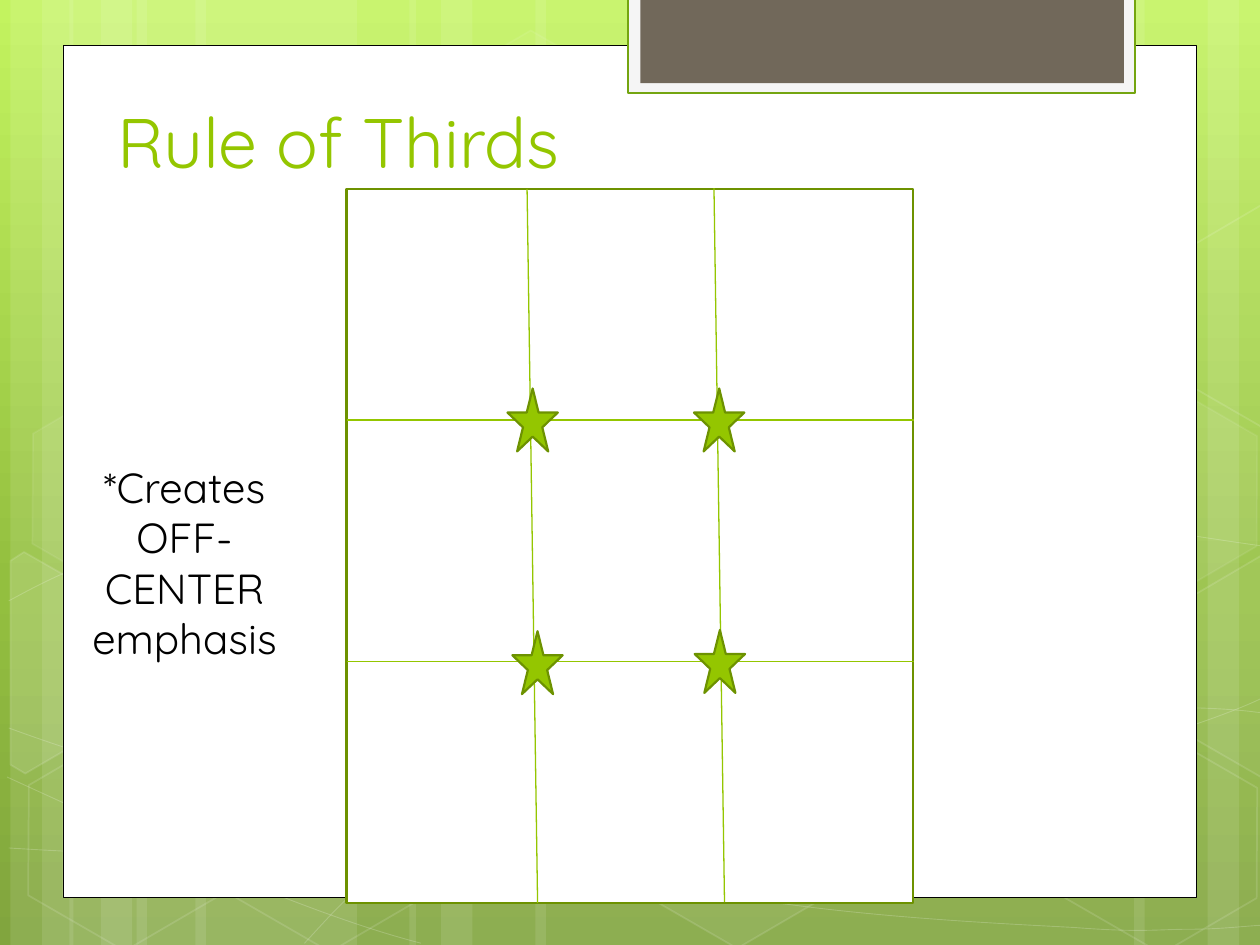
import math

import pptx
import pptx.dml.color
import pptx.enum.shapes
import pptx.enum.text
import pptx.oxml.ns
import pptx.util
from lxml import etree

Pt = pptx.util.Pt
RGB = pptx.dml.color.RGBColor
SHAPE = pptx.enum.shapes.MSO_SHAPE
FIT = pptx.enum.text.MSO_AUTO_SIZE
ALIGN = pptx.enum.text.PP_ALIGN
qn = pptx.oxml.ns.qn

WHITE = RGB(0xFF, 0xFF, 0xFF)
BLACK = RGB(0, 0, 0)
GREEN = RGB(0x94, 0xC6, 0x00)
DARK_GREEN = RGB(0x6D, 0x92, 0x00)
TAB_GREEN = RGB(0x74, 0xA5, 0x10)
PALE_GREY = RGB(0xF5, 0xF5, 0xF5)
BROWN = RGB(0x71, 0x68, 0x5A)
BACKDROP = [(0, "C3F35F"), (62, "93BF3F"), (100, "81A53E")]
FONT = "Quicksand"


def paint(shape, fill=None, line=None, width=1, fill_alpha=100, line_alpha=100):
    """Set fill and outline; alphas are opacities in percent."""
    shape.shadow.inherit = False
    for part, color, alpha in ((shape.fill, fill, fill_alpha),
                               (shape.line.fill, line, line_alpha)):
        if color is None:
            part.background()
            continue
        part.solid()
        part.fore_color.rgb = color
        if alpha < 100:
            solid = part._xPr.find(qn("a:solidFill"))
            etree.SubElement(solid[0], qn("a:alpha"), val=str(alpha * 1000))
    if line is not None:
        shape.line.width = Pt(width)


def outline(shapes, points, close):
    """Draw a freeform through points given in points."""
    points = [(Pt(x), Pt(y)) for x, y in points]
    builder = shapes.build_freeform(*points[0], scale=1.0)
    builder.add_line_segments(points[1:], close=close)
    return builder.convert_to_shape()


deck = pptx.Presentation()
deck.slide_width, deck.slide_height = Pt(720), Pt(540)
page = deck.slides.add_slide(deck.slide_layouts[5])
shapes = page.shapes

# Background gradient, top to bottom
backdrop = page.background.fill
backdrop.gradient()
backdrop.gradient_angle = 270
stops = page.background._cSld.find(".//" + qn("a:gsLst"))
for stop in list(stops):
    stops.remove(stop)
for position, color in BACKDROP:
    stop = etree.SubElement(stops, qn("a:gs"), pos=str(position * 1000))
    etree.SubElement(stop, qn("a:srgbClr"), val=color)

# Translucent vertical bars: left, width, rotation
left_bars = [(78, 126, 0), (6, 36, 0), (24, 60, 0)]
bars = left_bars + [(left + 33.6, width, turn) for left, width, turn in left_bars]
bars += [(528, 126, 180), (690, 36, 180), (648, 60, 180),
         (306, 222, 0), (234, 36, 0), (252, 60, 0)]
for left, width, turn in bars:
    bar = shapes.add_shape(SHAPE.RECTANGLE, Pt(left), 0, Pt(width), Pt(540))
    bar.rotation = turn
    paint(bar, WHITE, fill_alpha=10)

# Thin waves: a start point, then cubic Bezier triples
waves = [
    [(5, 484.6), (44, 487), (83, 489), (137, 488), (191, 487), (258, 486), (330, 479),
     (402, 472), (504, 458), (570, 444), (636, 431), (703, 409), (725, 397)],
    [(5, 343.4), (26, 332), (47, 321), (87, 310), (128, 299), (186, 284), (250, 279),
     (314, 273), (392, 273), (471, 279), (550, 284), (682, 307), (725, 312.5)],
    [(4, 444), (91, 484), (178, 523), (240.5, 539)],
    [(5, 416), (27, 424), (50, 432), (92, 443.5), (134, 454), (197, 472), (257, 484.6),
     (317, 497), (392, 510), (452, 517), (512, 525), (576, 528), (614, 530),
     (652, 533), (662, 531), (680, 531), (699, 531), (712, 529), (725, 528.5)],
    [(174, 539), (187, 525), (200, 510), (217, 497.5), (235, 485), (259, 470), (279, 460),
     (300, 450), (312, 446), (338, 438.5), (364, 431), (413, 421), (438, 416),
     (464, 411), (467, 411), (490, 410), (512, 408), (547, 405), (572, 404.6),
     (597, 404), (638, 404.6), (638, 404.6), (654, 404.6), (670, 404.6), (686, 404.6),
     (699, 405), (711, 406), (718, 407), (724, 407.5), (722, 407), (724, 407.5)],
]
for points in waves:
    wave = outline(shapes, points, False)
    segments = list(wave._element.iter(qn("a:lnTo")))
    for first in range(0, len(segments), 3):
        triple = segments[first:first + 3]
        curve = etree.SubElement(triple[0].getparent(), qn("a:cubicBezTo"))
        for segment in triple:
            curve.append(segment[0])
            segment.getparent().remove(segment)
    paint(wave, line=WHITE, width=0.5, line_alpha=20)

# Hexagons: left, top, fill opacity (0 for none), line opacity
hexagons = [(240.5, 26, 4, 8), (358, 424, 6, 12), (8, 425.5, 0, 12), (10.4, 224.6, 7, 8),
            (125.3, 426, 0, 12), (542, 326, 10, 12), (600.5, 427, 0, 12), (600.5, 226, 7, 8)]
for left, top, fill_alpha, line_alpha in hexagons:
    hexagon = shapes.add_shape(SHAPE.HEXAGON, Pt(left), Pt(top), Pt(126), Pt(109.4))
    hexagon.adjustments[0] = 0.285
    hexagon.rotation = 30
    paint(hexagon, WHITE if fill_alpha else None, WHITE, 1, fill_alpha, line_alpha)

# Hexagons cut off by the slide edges: corners, turning centre, fill opacity
left_cut = [(6, 320.4), (13.7, 315.4), (69, 347), (68.4, 410.4), (14.4, 442), (6, 437)]
right_cut = [(666.7, 349.2), (720.7, 317.5), (726.5, 321), (726.5, 441.4),
             (721.4, 444.2), (666.7, 412.6)]
upper_cut = [(x, y - 200.3) for x, y in right_cut]
cos, sin = math.cos(math.radians(30)), math.sin(math.radians(30))
for corners, (mid_x, mid_y), fill_alpha in ((left_cut, (25.9, 385.2), 10),
                                            (right_cut, (709.2, 374.4), 4),
                                            (upper_cut, (709.2, 174.1), 0)):
    upright = [(mid_x + (x - mid_x) * cos + (y - mid_y) * sin,
                mid_y - (x - mid_x) * sin + (y - mid_y) * cos) for x, y in corners]
    cut = outline(shapes, upright, True)
    cut.rotation = 30
    paint(cut, WHITE if fill_alpha else None, WHITE, 1, fill_alpha, 12)

# Content panel, top tab and the frame of the thirds
panels = [
    (36, 26, 648, 487, WHITE, BLACK, 0.5),
    (359, -1.5, 289.8, 54.7, PALE_GREY, TAB_GREEN, 1.25),
    (366, -1.5, 276.2, 49, BROWN, None, 0),
    (198, 108, 324, 408, WHITE, DARK_GREEN, 1.25),
]
for left, top, width, height, fill, line, weight in panels:
    if (left, top) == (198, 108):
        # Title goes in front of the panel and behind the frame
        title = shapes.title
        title._element.getparent().append(title._element)
    panel = shapes.add_shape(SHAPE.RECTANGLE, Pt(left), Pt(top), Pt(width), Pt(height))
    paint(panel, fill, line, weight)

# Lines of the thirds
thirds = [(301.2, 108, 307.2, 516), (408, 107.5, 414, 515.5),
          (198, 240, 522, 240), (198, 378, 522, 378)]
for ends in thirds:
    line = shapes.add_connector(pptx.enum.shapes.MSO_CONNECTOR.STRAIGHT,
                                *[Pt(end) for end in ends])
    line.line.color.rgb = GREEN
    line.line.width = Pt(0.75)
    etree.SubElement(line._element.spPr, qn("a:effectLst"))

# Stars at the crossings
for left, top in ((290, 222), (396.6, 222), (292.8, 360.7), (397, 360)):
    star = shapes.add_shape(SHAPE.STAR_5_POINT, Pt(left), Pt(top), Pt(28.8), Pt(36))
    paint(star, GREEN, DARK_GREEN, 1.25)

# Title and the note beside the frame
title.left, title.top, title.width, title.height = Pt(60), Pt(18), Pt(553), Pt(90)
title.text_frame.vertical_anchor = pptx.enum.text.MSO_ANCHOR.BOTTOM
note = shapes.add_textbox(Pt(31.3), Pt(260), Pt(148.3), Pt(94.3))
for box, words, size, color, align, fit in (
        (title, "Rule of Thirds", 40, GREEN, ALIGN.LEFT, FIT.NONE),
        (note, "*Creates OFF-CENTER emphasis", 24, BLACK, ALIGN.CENTER,
         FIT.SHAPE_TO_FIT_TEXT)):
    box.text_frame.word_wrap = True
    box.text_frame.auto_size = fit
    para = box.text_frame.paragraphs[0]
    para.alignment = align
    span = para.add_run()
    span.text = words
    span.font.name = FONT
    span.font.size = Pt(size)
    span.font.color.rgb = color

deck.save("out.pptx")
